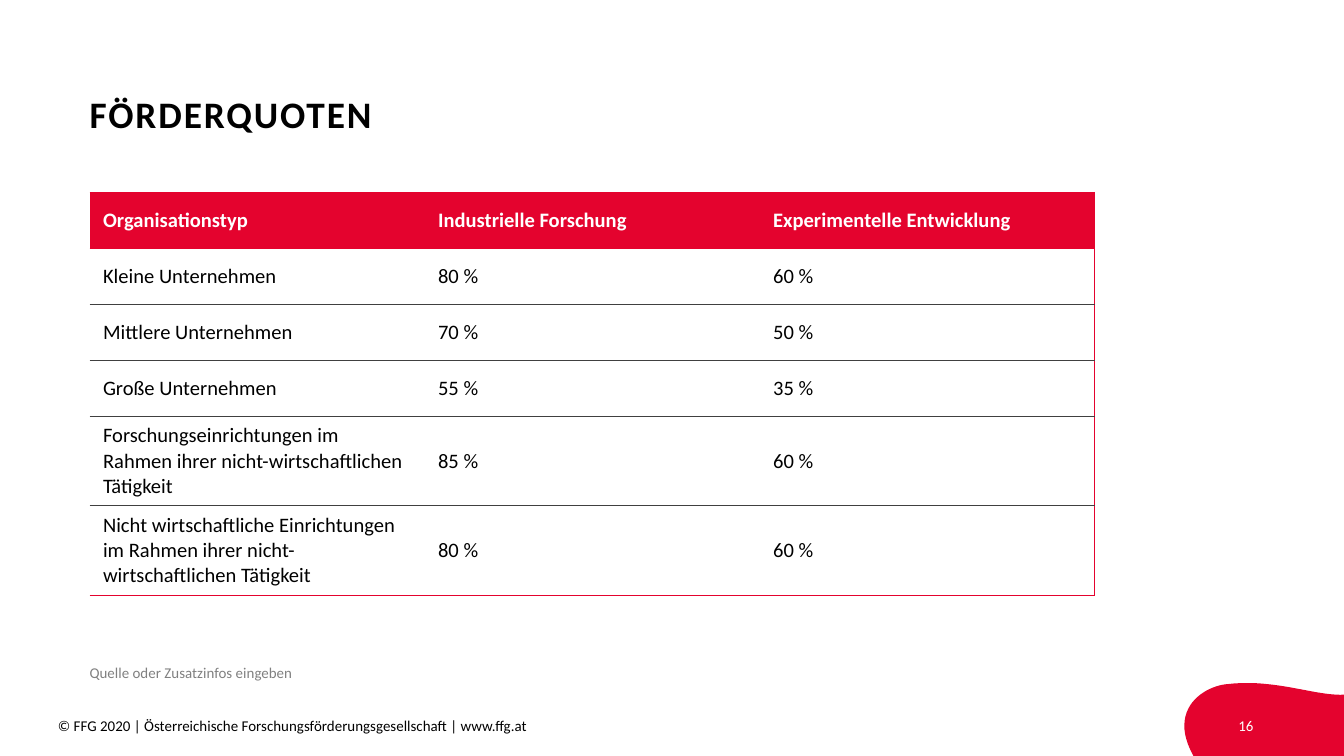
from lxml.etree import SubElement
from pptx import Presentation
from pptx.dml.color import RGBColor
from pptx.enum.text import MSO_ANCHOR, PP_ALIGN
from pptx.oxml.ns import qn
from pptx.util import Pt

RED, BLACK, WHITE, GREY, RULE = "E4032E", "000000", "FFFFFF", "808080", "404040"


def rgb(value):
    return RGBColor.from_string(value)


def write(tf, text, color, align=PP_ALIGN.LEFT, **formats):
    p = tf.paragraphs[0]
    p.alignment = align
    r = p.add_run()
    r.text = text
    r.font.color.rgb = rgb(color)
    for name, value in {"name": "Calibri", **formats}.items():
        setattr(r.font, name, value)
    return r


prs = Presentation()
prs.slide_width, prs.slide_height = Pt(720), Pt(405)
s = prs.slides.add_slide(prs.slide_layouts[6])

curves = [
    [(658, 366.5), (683.3, 363.6), (704.9, 373), (720, 372.2)],
    [(639.4, 405), (625, 379.4), (645.8, 367.2), (658, 366.5)],
]
points = []
for a, b, c, d in curves:
    for i in range(25):
        t = i / 24
        u = 1 - t
        weights = (u**3, 3 * u * u * t, 3 * u * t * t, t**3)
        points.append(tuple(Pt(sum(w * q[k] for w, q in zip(weights, (a, b, c, d)))) for k in (0, 1)))
    if d[0] == 720:
        points.append((Pt(720), Pt(405)))
builder = s.shapes.build_freeform(*points[0], scale=1.0)
builder.add_line_segments(points[1:], close=True)
sp = builder.convert_to_shape()
sp.shadow.inherit = False
sp.fill.solid()
sp.fill.fore_color.rgb = rgb(RED)
sp.line.fill.background()

texts = [
    ("FÖRDERQUOTEN", 48, 21.5, 538.5, 81.5, 20, BLACK, PP_ALIGN.LEFT, MSO_ANCHOR.MIDDLE),
    ("Quelle oder Zusatzinfos eingeben", 48, 355.5, 575, 9.5, 8, GREY, PP_ALIGN.LEFT, MSO_ANCHOR.TOP),
    ("© FFG 2020 | Österreichische Forschungsförderungsgesellschaft | www.ffg.at",
     31, 384, 343, 13.5, 8, BLACK, PP_ALIGN.LEFT, MSO_ANCHOR.TOP),
    ("16", 634, 384, 37.5, 13.5, 8, WHITE, PP_ALIGN.RIGHT, MSO_ANCHOR.TOP),
]
for text, x, y, w, h, size, color, align, anchor in texts:
    tf = s.shapes.add_textbox(Pt(x), Pt(y), Pt(w), Pt(h)).text_frame
    frame = {"word_wrap": True, "vertical_anchor": anchor, "margin_left": 0,
             "margin_right": 0, "margin_top": 0, "margin_bottom": 0}
    for name, value in frame.items():
        setattr(tf, name, value)
    r = write(tf, text, color, align, size=Pt(size), bold=size == 20)
    if size == 20:
        tf.paragraphs[0].line_spacing = 0.9
        r._r.get_or_add_rPr().set("spc", "100")

rows = [
    ("Organisationstyp", "Industrielle Forschung", "Experimentelle Entwicklung"),
    ("Kleine Unternehmen", "80 %", "60 %"),
    ("Mittlere Unternehmen", "70 %", "50 %"),
    ("Große Unternehmen", "55 %", "35 %"),
    ("Forschungseinrichtungen im Rahmen ihrer nicht-wirtschaftlichen Tätigkeit", "85 %", "60 %"),
    ("Nicht wirtschaftliche Einrichtungen im Rahmen ihrer nicht-wirtschaftlichen Tätigkeit", "80 %", "60 %"),
]
heights = [30] * 4 + [48] * 2
last = len(rows) - 1
table = s.shapes.add_table(len(rows), 3, Pt(48), Pt(103), Pt(538.5), Pt(sum(heights))).table
table.first_row = table.horz_banding = False
for column in table.columns:
    column.width = Pt(179.5)
for i, row in enumerate(rows):
    table.rows[i].height = Pt(heights[i])
    for j, text in enumerate(row):
        cell = table.cell(i, j)
        cell.vertical_anchor = MSO_ANCHOR.MIDDLE
        tcPr = cell._tc.get_or_add_tcPr()
        borders = {
            "a:lnL": None,
            "a:lnR": RED if j == 2 else None,
            "a:lnT": RED if i < 2 else RULE,
            "a:lnB": RED if i in (0, last) else RULE,
        }
        for tag, color in borders.items():
            ln = SubElement(tcPr, qn(tag), w=str(Pt(0.5)))
            if color:
                fill = SubElement(ln, qn("a:solidFill"))
                SubElement(fill, qn("a:srgbClr"), val=color)
            else:
                SubElement(ln, qn("a:noFill"))
        if i == 0:
            cell.fill.solid()
            cell.fill.fore_color.rgb = rgb(RED)
        else:
            cell.fill.background()
        write(cell.text_frame, text, BLACK if i else WHITE, size=Pt(11), bold=i == 0)

prs.save("out.pptx")
